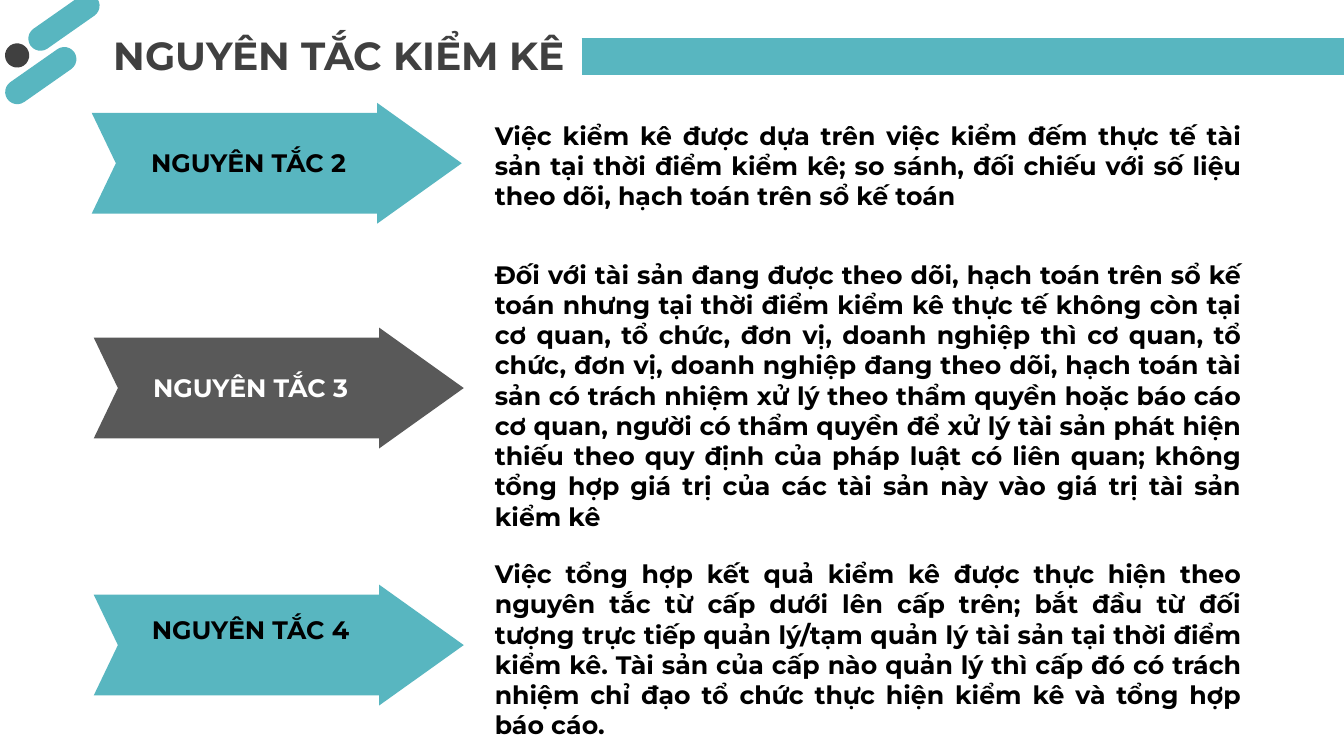
from lxml.etree import SubElement
from pptx import Presentation
from pptx.dml.color import RGBColor
from pptx.enum.shapes import MSO_CONNECTOR, MSO_SHAPE
from pptx.enum.text import MSO_AUTO_SIZE, PP_ALIGN
from pptx.oxml.ns import qn
from pptx.util import Inches, Pt

TEAL = "58B6C0"
DARK = "404040"
GREY = "595959"
BLACK = "000000"
WHITE = "FFFFFF"

PRINCIPLES = [
    {
        "label": "NGUYÊN TẮC 2", "label_at": (1.36, 1.41), "label_color": BLACK,
        "arrow_at": (0.91, 1.62), "arrow_color": TEAL,
        "rule_top": 1.14, "rule_height": 1.01,
        "rule": "Việc kiểm kê được dựa trên việc kiểm đếm thực tế tài sản tại thời "
                "điểm kiểm kê; so sánh, đối chiếu với số liệu theo dõi, hạch toán "
                "trên sổ kế toán",
    },
    {
        "label": "NGUYÊN TẮC 3", "label_at": (1.38, 3.64), "label_color": WHITE,
        "arrow_at": (0.93, 3.85), "arrow_color": GREY,
        "rule_top": 2.52, "rule_height": 2.83,
        "rule": "Đối với tài sản đang được theo dõi, hạch toán trên sổ kế toán nhưng "
                "tại thời điểm kiểm kê thực tế không còn tại cơ quan, tổ chức, đơn vị, "
                "doanh nghiệp thì cơ quan, tổ chức, đơn vị, doanh nghiệp đang theo dõi, "
                "hạch toán tài sản có trách nhiệm xử lý theo thẩm quyền hoặc báo cáo "
                "cơ quan, người có thẩm quyền để xử lý tài sản phát hiện thiếu theo quy "
                "định của pháp luật có liên quan; không tổng hợp giá trị của các tài sản "
                "này vào giá trị tài sản kiểm kê",
    },
    {
        "label": "NGUYÊN TẮC 4", "label_at": (1.38, 6.05), "label_color": BLACK,
        "arrow_at": (0.93, 6.4), "arrow_color": TEAL,
        "rule_top": 5.49, "rule_height": 1.92,
        "rule": "Việc tổng hợp kết quả kiểm kê được thực hiện theo nguyên tắc từ cấp "
                "dưới lên cấp trên; bắt đầu từ đối tượng trực tiếp quản lý/tạm quản lý "
                "tài sản tại thời điểm kiểm kê. Tài sản của cấp nào quản lý thì cấp đó "
                "có trách nhiệm chỉ đạo tổ chức thực hiện kiểm kê và tổng hợp báo cáo.",
    },
]


def rgb(value):
    return RGBColor.from_string(value)


def paint(shape, color):
    shape.shadow.inherit = False
    shape.fill.solid()
    shape.fill.fore_color.rgb = rgb(color)
    shape.line.fill.background()


def add_pill(slide, left, top, width, color):
    pill = slide.shapes.add_shape(
        MSO_SHAPE.ROUNDED_RECTANGLE,
        Inches(left), Inches(top), Inches(width), Inches(0.24))
    pill.adjustments[0] = 0.5
    pill.rotation = 325
    paint(pill, color)


def add_text(slide, left, top, width, height, text, size, color, align):
    box = slide.shapes.add_textbox(
        Inches(left), Inches(top), Inches(width), Inches(height))
    frame = box.text_frame
    frame.word_wrap = True
    frame.auto_size = MSO_AUTO_SIZE.SHAPE_TO_FIT_TEXT
    paragraph = frame.paragraphs[0]
    paragraph.alignment = align
    run = paragraph.add_run()
    run.text = text
    run.font.name = "Montserrat"
    run.font.size = Pt(size)
    run.font.bold = True
    run.font.color.rgb = rgb(color)


def add_title_bar(slide):
    bar = slide.shapes.add_connector(
        MSO_CONNECTOR.STRAIGHT,
        Inches(5.77), Inches(0.56), Inches(13.33), Inches(0.56))
    bar.line.color.rgb = rgb(TEAL)
    bar.line.width = Pt(26.25)
    SubElement(bar._element.spPr, qn("a:effectLst"))


def add_notched_arrow(slide, left, middle, color):
    outline = [(3.67, 0), (2.83, 0.6), (2.83, 0.5), (0, 0.5),
               (0.24, 0), (0, -0.5), (2.83, -0.5), (2.83, -0.6)]
    points = [(Inches(left + x), Inches(middle + y)) for x, y in outline]
    builder = slide.shapes.build_freeform(*points[0], scale=1.0)
    builder.add_line_segments(points[1:], close=True)
    paint(builder.convert_to_shape(), color)


def add_principle(slide, principle):
    add_notched_arrow(slide, *principle["arrow_at"], principle["arrow_color"])
    add_text(slide, 4.81, principle["rule_top"], 7.6, principle["rule_height"],
             principle["rule"], 18, BLACK, PP_ALIGN.JUSTIFY)
    add_text(slide, *principle["label_at"], 2.21, 0.4,
             principle["label"], 18, principle["label_color"], PP_ALIGN.CENTER)


def main():
    deck = Presentation()
    deck.slide_width = Inches(13.33)
    deck.slide_height = Inches(7.5)
    slide = deck.slides.add_slide(deck.slide_layouts[6])

    add_pill(slide, 0.23, 0.1, 0.81, TEAL)
    add_pill(slide, 0, 0.63, 0.81, TEAL)
    add_pill(slide, 0.05, 0.43, 0.24, DARK)
    add_text(slide, 1.03, 0.26, 5.08, 0.57,
             "NGUYÊN TẮC KIỂM KÊ", 28, DARK, PP_ALIGN.LEFT)
    add_title_bar(slide)
    for principle in PRINCIPLES:
        add_principle(slide, principle)

    deck.save("out.pptx")


if __name__ == "__main__":
    main()
